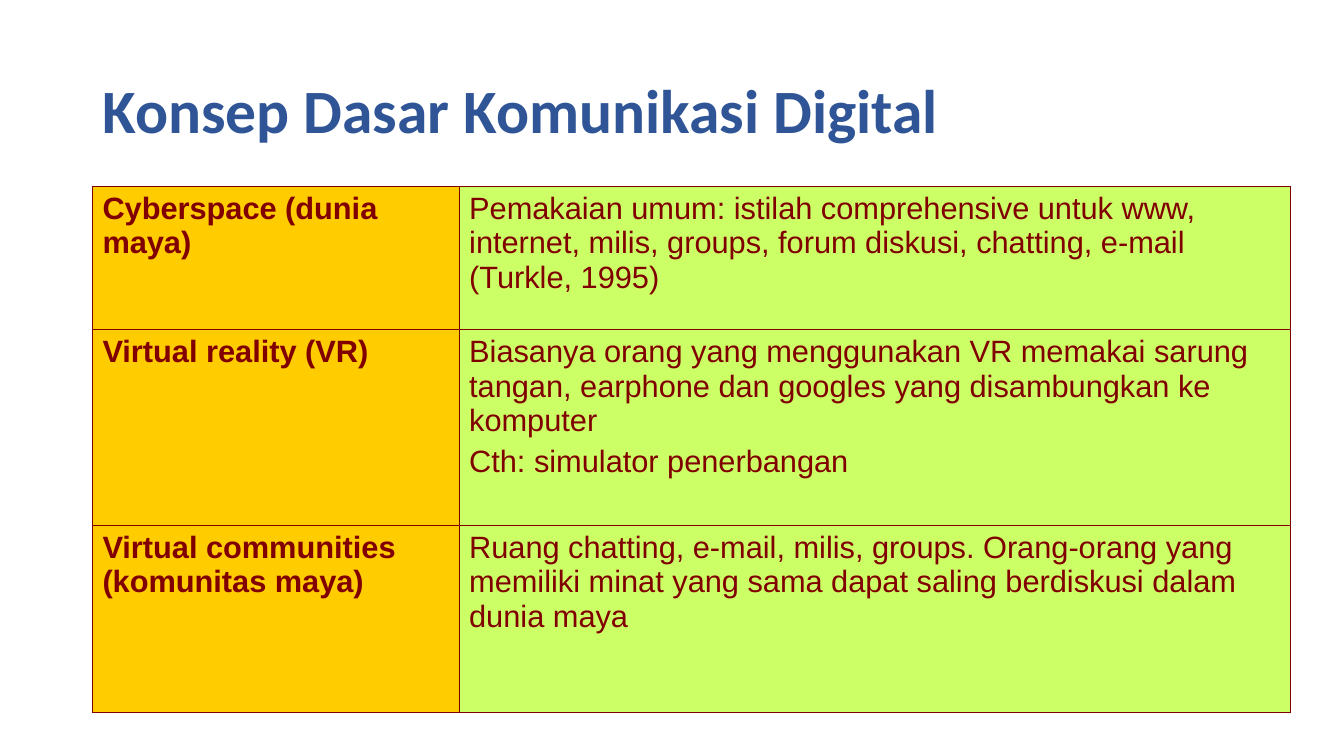
from lxml import etree
from pptx import Presentation
from pptx import util as u
from pptx.dml.color import RGBColor
from pptx.enum import text
from pptx.oxml.ns import qn

CONCEPTS = [
    (3.61, "Cyberspace (dunia maya)",
     ["Pemakaian umum: istilah comprehensive untuk www, internet, milis, "
      "groups, forum diskusi, chatting, e-mail (Turkle, 1995)"]),
    (4.93, "Virtual reality (VR)",
     ["Biasanya orang yang menggunakan VR memakai sarung tangan, earphone "
      "dan googles yang disambungkan ke komputer",
      "Cth: simulator penerbangan"]),
    (4.72, "Virtual communities (komunitas maya)",
     ["Ruang chatting, e-mail, milis, groups. Orang-orang yang memiliki minat "
      "yang sama dapat saling berdiskusi dalam dunia maya"]),
]


def rgb(value):
    return RGBColor.from_string(value)


class Deck:
    """Hold the slide style and draw each kind of element."""

    blue, maroon, gold, lime = "2F5597", "800000", "FFCC00", "CCFF66"

    def __init__(self):
        self.prs = Presentation()
        self.prs.slide_width, self.prs.slide_height = u.Cm(33.87), u.Cm(19.05)
        self.s = self.prs.slides.add_slide(self.prs.slide_layouts[5])

    def font(self, p, name, size, color, bold):
        for r in p.runs:
            r.font.name, r.font.size, r.font.bold = name, u.Pt(size), bold
            r.font.color.rgb = rgb(color)

    def title(self, words, left, top, width, height):
        sp = self.s.shapes.title
        sp.left, sp.top = u.Cm(left), u.Cm(top)
        sp.width, sp.height = u.Cm(width), u.Cm(height)
        tf = sp.text_frame
        tf.text = words
        tf.word_wrap = True
        tf.auto_size = text.MSO_AUTO_SIZE.NONE
        tf.vertical_anchor = text.MSO_ANCHOR.MIDDLE
        p = tf.paragraphs[0]
        p.alignment, p.line_spacing = text.PP_ALIGN.LEFT, 0.9
        self.font(p, "Calibri", 44, self.blue, True)

    def cell(self, cell, lines, fill, bold):
        tf = cell.text_frame
        tf.text = "\n".join(lines)
        for i, p in enumerate(tf.paragraphs):
            p.space_before = u.Pt(4.4 if i else 0)
            self.font(p, "Arial", 22, self.maroon, bold)
        tcPr = cell._tc.get_or_add_tcPr()
        for side in ("lnL", "lnR", "lnT", "lnB"):
            ln = etree.SubElement(tcPr, qn("a:" + side), w=str(u.Pt(1)))
            paint = etree.SubElement(ln, qn("a:solidFill"))
            etree.SubElement(paint, qn("a:srgbClr"), val=self.maroon)
        cell.fill.solid()
        cell.fill.fore_color.rgb = rgb(fill)

    def table(self, rows, left, top, widths):
        height = sum(row[0] for row in rows)
        table = self.s.shapes.add_table(
            len(rows), len(widths), u.Cm(left), u.Cm(top),
            u.Cm(sum(widths)), u.Cm(height)).table
        table.first_row = table.horz_banding = False
        for column, width in zip(table.columns, widths):
            column.width = u.Cm(width)
        for row, (height, term, meaning) in zip(table.rows, rows):
            row.height = u.Cm(height)
            self.cell(row.cells[0], [term], self.gold, True)
            self.cell(row.cells[1], meaning, self.lime, False)


def main():
    deck = Deck()
    deck.title("Konsep Dasar Komunikasi Digital", 2.33, 1.01, 29.21, 3.68)
    deck.table(CONCEPTS, 2.33, 4.7, (9.24, 20.95))
    deck.prs.save("out.pptx")


if __name__ == "__main__":
    main()
